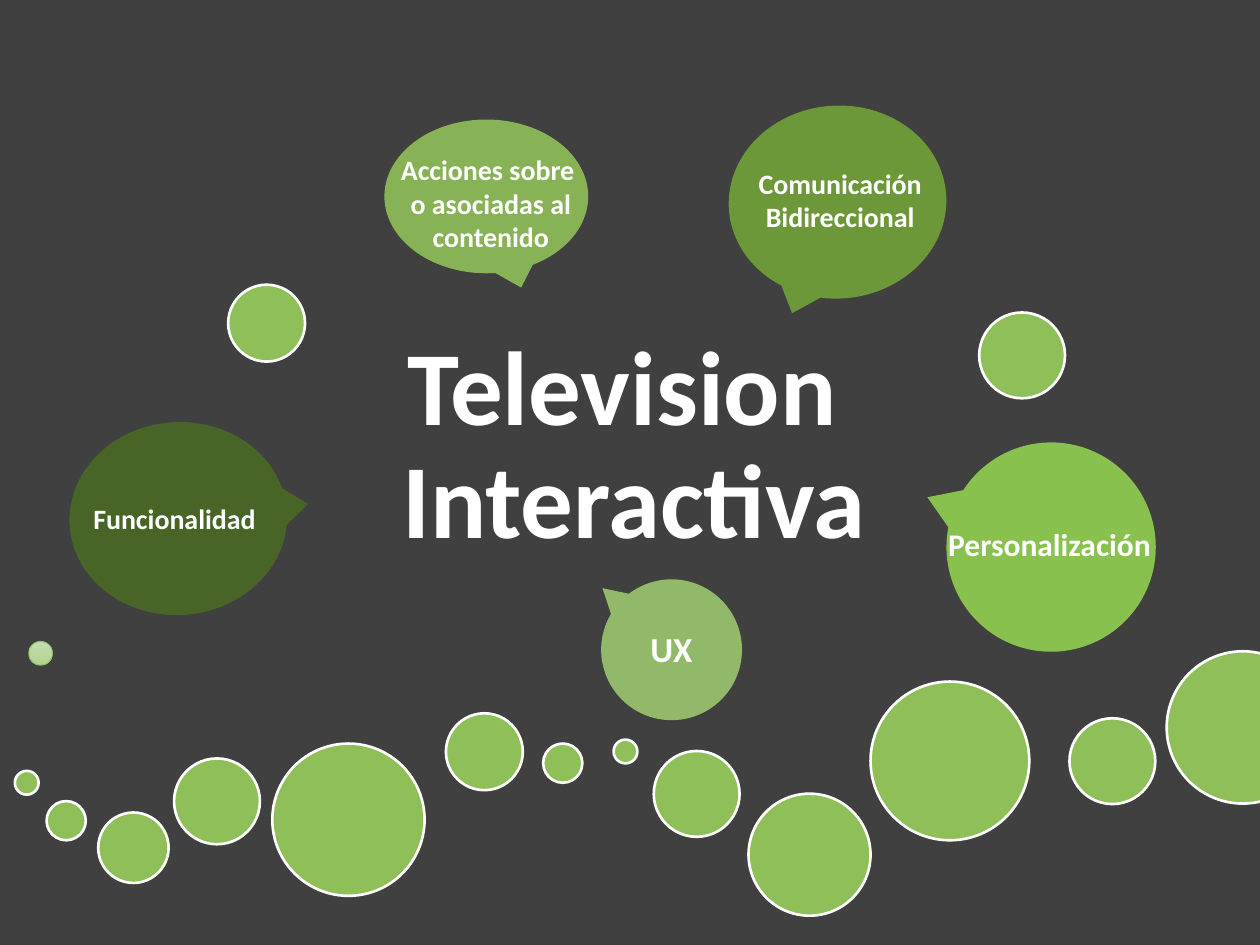
import pptx
import pptx.dml.color
import pptx.enum.shapes
import pptx.enum.text
import pptx.oxml.ns
import pptx.util
import lxml.etree
from pptx.util import Cm

# Content: lengths in cm
TITLE = {"lines": ["Television ", "Interactiva"], "box": (1.35, 6.53, 22.86, 5)}

# Plain circles: left, top, diameter
CIRCLES = [
    (13.18, 15.14, 1.73), (15.09, 16, 2.46), (17.55, 13.74, 3.2),
    (21.56, 14.48, 1.73), (23.52, 13.13, 3.07), (12.37, 14.91, 0.48),
    (3.51, 15.29, 1.73), (5.49, 14.99, 3.07), (8.99, 14.38, 1.55),
    (10.95, 14.99, 0.79), (0.3, 15.54, 0.48), (1.98, 16.38, 1.42),
    (0.94, 16.15, 0.79), (19.74, 6.3, 1.73), (4.6, 5.74, 1.55),
]
PALE_DOT = (0.58, 12.93, 0.48)

# Speech bubbles; opaque ones are tilted and carry a filled label
BUBBLES = [
    {"lines": ["Acciones sobre ", "o asociadas al", "contenido"], "size": "small",
     "color": "leaf", "opacity": 90, "tail": (-0.171, 0.593),
     "box": (7.75, 2.41, 4.11, 3.1), "label": (7.8, 2.95, 4.19, 2.31)},
    {"lines": ["Funcionalidad"], "size": "small",
     "color": "forest", "opacity": 100, "tail": (-0.031, 0.599),
     "box": (1.65, 8.26, 3.89, 4.39), "label": (1.6, 9.98, 3.84, 0.94)},
    {"lines": ["Personalización"], "size": "medium",
     "color": "lime", "opacity": 90, "tail": (0.591, -0.238),
     "box": (19.08, 8.92, 4.22, 4.22), "label": (18.85, 10.46, 4.62, 1.02)},
    {"lines": ["UX"], "size": "large",
     "color": "sage", "opacity": 89, "tail": (0.491, -0.437),
     "box": (12.12, 11.68, 2.84, 2.84), "label": (12.85, 12.52, 1.37, 1.12)},
    {"lines": ["Comunicación", "Bidireccional"], "size": "small",
     "color": "moss", "opacity": 100, "tail": (0.559, -0.242),
     "box": (14.94, 1.88, 3.89, 4.39), "label": (15.01, 3.23, 3.86, 1.63)},
]
TILT = 266.2

THEME = {
    "font": "Calibri",
    "colors": {"back": "404040", "text": "FFFFFF", "leaf": "8FBF59",
               "forest": "486527", "lime": "92D050", "sage": "9DC76F",
               "moss": "6C983A", "pale_top": "C4DDAF", "pale_bottom": "B1D391"},
    "sizes": {"title": 60, "large": 20, "medium": 18, "small": 16},
}


def color(name):
    return pptx.dml.color.RGBColor.from_string(THEME["colors"][name])


def paint(fill, name):
    fill.solid()
    fill.fore_color.rgb = color(name)


def add_shape(slide, kind, box):
    shape = slide.shapes.add_shape(kind, *map(Cm, box))
    shape.shadow.inherit = False
    return shape


def add_circle(slide, left, top, diameter, line_color, line_width):
    circle = add_shape(slide, pptx.enum.shapes.MSO_SHAPE.OVAL,
                       (left, top, diameter, diameter))
    paint(circle.fill, "leaf")
    circle.line.color.rgb = color(line_color)
    circle.line.width = pptx.util.Pt(line_width)
    return circle


def add_text(slide, lines, box, size, wrap=False, spacing=None):
    text = slide.shapes.add_textbox(*map(Cm, box))
    text.text_frame.word_wrap = wrap
    for index, line in enumerate(lines):
        paragraph = (text.text_frame.add_paragraph() if index
                     else text.text_frame.paragraphs[0])
        paragraph.alignment = pptx.enum.text.PP_ALIGN.CENTER
        paragraph.line_spacing = spacing
        run = paragraph.add_run()
        run.text = line
        run.font.name = THEME["font"]
        run.font.size = pptx.util.Pt(THEME["sizes"][size])
        run.font.bold = True
        run.font.color.rgb = color("text")
    return text


def add_bubble(slide, bubble):
    callout = add_shape(slide, pptx.enum.shapes.MSO_SHAPE.OVAL_CALLOUT, bubble["box"])
    for index, offset in enumerate(bubble["tail"]):
        callout.adjustments[index] = offset
    paint(callout.fill, bubble["color"])
    callout.line.fill.background()
    properties = callout._element.spPr
    properties.find(pptx.oxml.ns.qn("a:xfrm")).set("flipH", "1")

    label = add_text(slide, bubble["lines"], bubble["label"], bubble["size"])
    label.text_frame.auto_size = pptx.enum.text.MSO_AUTO_SIZE.SHAPE_TO_FIT_TEXT
    if bubble["opacity"] == 100:
        callout.rotation = TILT
        paint(label.fill, bubble["color"])
    else:
        tint = properties.find(pptx.oxml.ns.qn("a:solidFill"))[0]
        alpha = lxml.etree.SubElement(tint, pptx.oxml.ns.qn("a:alpha"))
        alpha.set("val", str(bubble["opacity"] * 1000))


def main():
    deck = pptx.Presentation()
    deck.slide_width, deck.slide_height = Cm(25.4), Cm(19.05)
    slide = deck.slides.add_slide(deck.slide_layouts[6])
    paint(slide.background.fill, "back")

    # Circles
    for circle in CIRCLES:
        add_circle(slide, *circle, "text", 1.5)
    dot = add_circle(slide, *PALE_DOT, "leaf", 0.5)
    dot.fill.gradient()
    dot.fill.gradient_angle = 270
    for stop, name in zip(dot.fill.gradient_stops, ("pale_top", "pale_bottom")):
        stop.color.rgb = color(name)
    for stop, position in zip(dot.fill.gradient_stops, (0, 1)):
        stop.position = position

    # Title
    title = add_text(slide, TITLE["lines"], TITLE["box"], "title", True, 0.9)
    title.text_frame.vertical_anchor = pptx.enum.text.MSO_ANCHOR.MIDDLE

    # Speech bubbles
    for bubble in BUBBLES:
        add_bubble(slide, bubble)

    deck.save("out.pptx")


if __name__ == "__main__":
    main()
